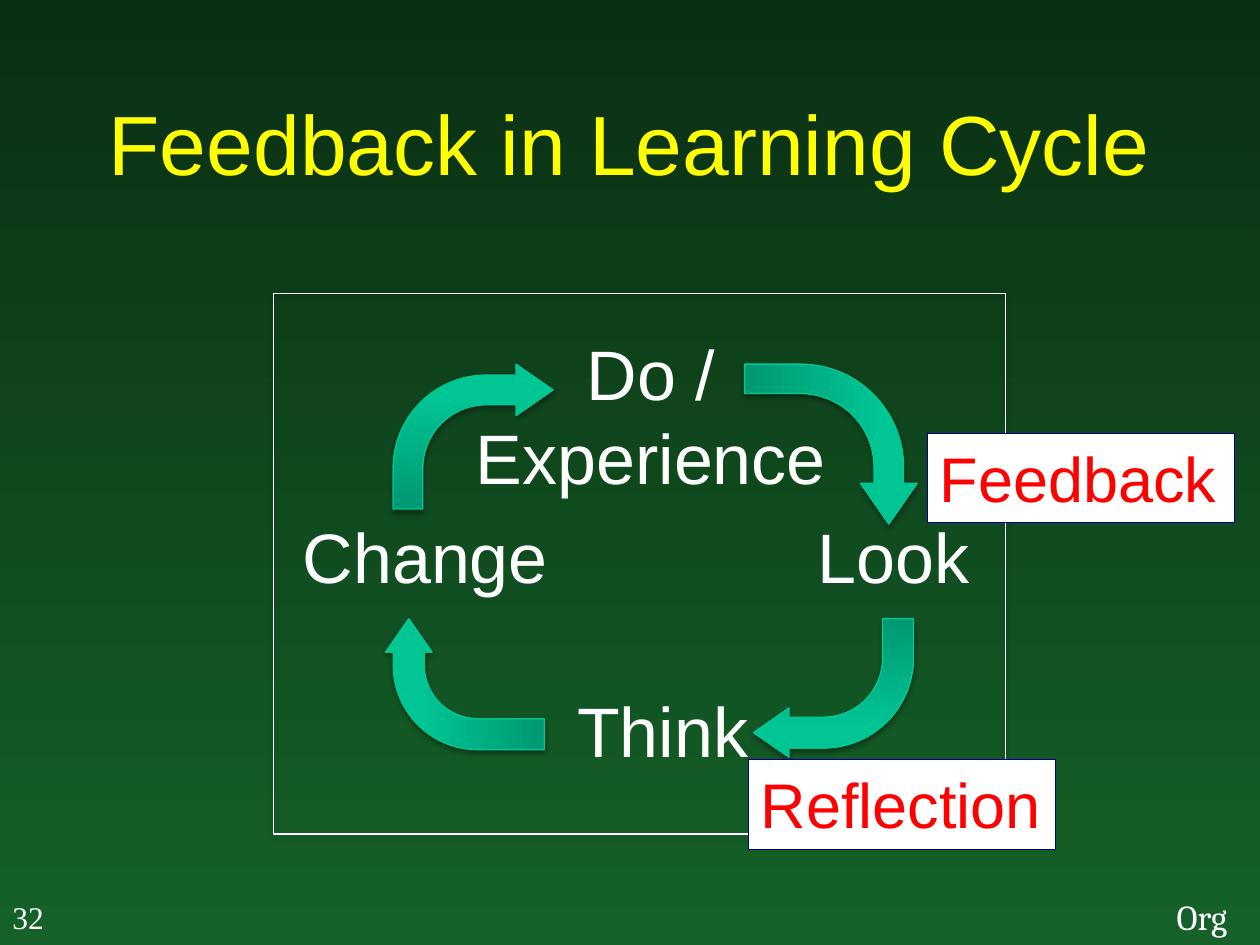
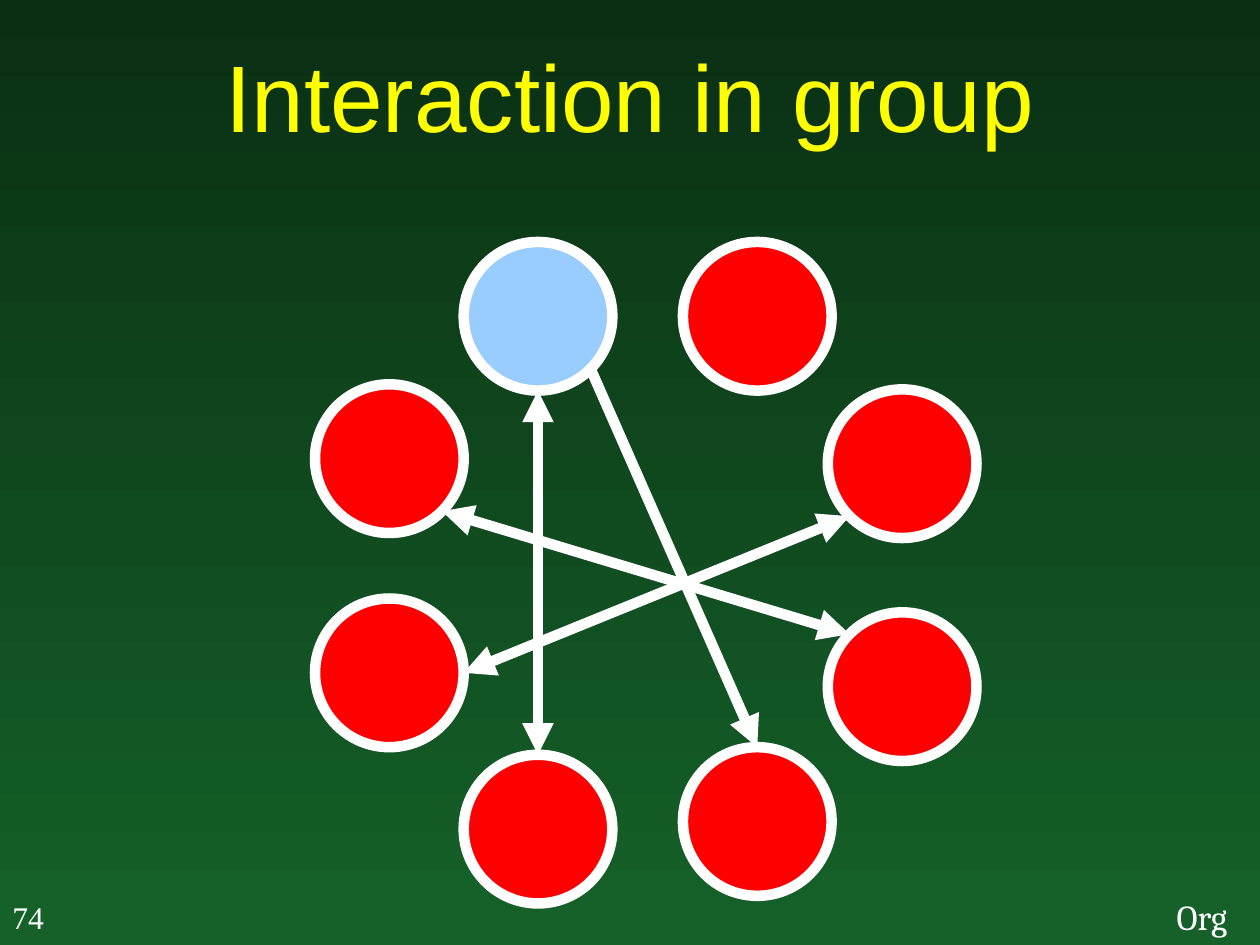
from dataclasses import dataclass
from math import cos, radians, sin

from lxml import etree
from pptx import Presentation
from pptx.dml.color import RGBColor
from pptx.enum.shapes import MSO_CONNECTOR, MSO_SHAPE
from pptx.enum.text import MSO_ANCHOR, PP_ALIGN
from pptx.oxml.ns import qn
from pptx.util import Inches, Pt

LEFT, CENTER = PP_ALIGN.LEFT, PP_ALIGN.CENTER
TOP, MIDDLE = MSO_ANCHOR.TOP, MSO_ANCHOR.MIDDLE
RECTANGLE, OVAL = MSO_SHAPE.RECTANGLE, MSO_SHAPE.OVAL
BENT_ARROW, STRAIGHT = MSO_SHAPE.BENT_ARROW, MSO_CONNECTOR.STRAIGHT
BLANK_LAYOUT = 6


@dataclass(frozen=True)
class Theme:
    background_top: str = "0A2F13"
    background_bottom: str = "156129"
    title: str = "FFFF00"
    white: str = "FFFFFF"
    red: str = "FF0000"
    leader: str = "99CCFF"
    label_edge: str = "000090"
    arrow_dark: str = "009872"
    arrow_light: str = "00C694"
    arrow_edge: str = "00C896"
    shadow: str = "000000"
    body_font: str = "Arial"
    footer_font: str = "Cambria"
    number_font: str = "Times New Roman"
    title_size: int = 48
    large_title_size: int = 54
    step_size: int = 40
    label_size: int = 36
    footer_size: int = 20
    number_size: int = 18
    thin: float = 0.75
    thick: float = 6


THEME = Theme()


@dataclass(frozen=True)
class Area:
    left: float
    top: float
    width: float
    height: float

    def lengths(self):
        return [Inches(v) for v in (self.left, self.top, self.width, self.height)]


@dataclass(frozen=True)
class TextStyle:
    size: int
    color: str
    font: str = THEME.body_font
    align: PP_ALIGN = LEFT
    anchor: MSO_ANCHOR = TOP
    wrap: bool = False


@dataclass(frozen=True)
class CycleArrow:
    area: Area
    rotation: int
    shaft: float
    bend: float


@dataclass(frozen=True)
class Member:
    left: float
    top: float
    color: str = THEME.red

    def rim(self, degrees: float) -> tuple[float, float]:
        radius = DIAMETER / 2
        angle = radians(degrees)
        return (self.left + radius * (1 + cos(angle)),
                self.top + radius * (1 + sin(angle)))


@dataclass(frozen=True)
class Exchange:
    start: str
    start_angle: int
    end: str
    end_angle: int
    two_way: bool = True


STEP = TextStyle(THEME.step_size, THEME.white, align=CENTER)
LABEL = TextStyle(THEME.label_size, THEME.red)
FOOTER = TextStyle(THEME.footer_size, THEME.white, THEME.footer_font, wrap=True)
NUMBER = TextStyle(THEME.number_size, THEME.white, THEME.number_font)

CYCLE_FRAME = Area(2.17, 2.33, 5.81, 4.29)
STEPS = {
    "Do /\nExperience": Area(3.66, 2.57, 3.01, 1.45),
    "Look": Area(6.38, 4.03, 1.42, 0.77),
    "Think": Area(4.47, 5.41, 1.58, 0.77),
    "Change": Area(2.29, 4.03, 2.17, 0.77),
}
DO_TO_LOOK = CycleArrow(Area(5.96, 2.84, 1.27, 1.37), 90, 0.184, 0.644)
OTHER_ARROWS = [
    CycleArrow(Area(5.98, 4.91, 1.27, 1.1), 180, 0.223, 0.65),
    CycleArrow(Area(3.17, 4.8, 1.04, 1.26), 270, 0.237, 0.644),
    CycleArrow(Area(3.12, 2.89, 1.27, 1.15), 0, 0.205, 0.644),
]
LABELS = {
    "Reflection": Area(5.94, 6.03, 2.44, 0.71),
    "Feedback": Area(7.36, 3.44, 2.44, 0.71),
}

DIAMETER = 1.18
MEMBERS = {
    "leader": Member(3.68, 1.92, THEME.leader),
    "upper left": Member(2.5, 3.05),
    "bottom left": Member(3.68, 5.99),
    "lower left": Member(2.5, 4.75),
    "bottom right": Member(5.42, 5.93),
    "top right": Member(5.42, 1.92),
    "upper right": Member(6.57, 3.09),
    "lower right": Member(6.57, 4.86),
}
EXCHANGES = [
    Exchange("lower left", 0, "upper right", 135),
    Exchange("bottom left", 270, "leader", 90),
    Exchange("upper left", 45, "lower right", 225),
    Exchange("leader", 45, "bottom right", 270, two_way=False),
]


def rgb(color: str) -> RGBColor:
    return RGBColor.from_string(color)


def fill_gradient(fill, start: str, end: str, angle: int, end_position: float = 1) -> None:
    fill.gradient()
    fill.gradient_angle = angle
    first, last = fill.gradient_stops
    first.color.rgb, last.color.rgb = rgb(start), rgb(end)
    first.position, last.position = 0, end_position


def write_text(shape, text: str, style: TextStyle) -> None:
    frame = shape.text_frame
    frame.word_wrap = style.wrap
    frame.vertical_anchor = style.anchor
    frame.text = text
    for para in frame.paragraphs:
        para.alignment = style.align
        para.font.size = Pt(style.size)
        para.font.name = style.font
        para.font.color.rgb = rgb(style.color)


def add_text(page, text: str, area: Area, style: TextStyle) -> None:
    write_text(page.shapes.add_textbox(*area.lengths()), text, style)


def add_outlined(page, kind, area: Area, fill: str | None, edge: str, weight: float):
    shape = page.shapes.add_shape(kind, *area.lengths())
    shape.shadow.inherit = False
    if fill:
        shape.fill.solid()
        shape.fill.fore_color.rgb = rgb(fill)
    else:
        shape.fill.background()
    shape.line.color.rgb = rgb(edge)
    shape.line.width = Pt(weight)
    return shape


def add_soft_shadow(shape) -> None:
    effects = shape._element.spPr.find(qn("a:effectLst"))
    shadow = etree.SubElement(
        effects, qn("a:outerShdw"), blurRad=str(Pt(3.1)), dist=str(Pt(1.8)),
        dir="5400000", rotWithShape="0")
    color = etree.SubElement(shadow, qn("a:srgbClr"), val=THEME.shadow)
    etree.SubElement(color, qn("a:alpha"), val="35000")


def add_cycle_arrow(page, arrow: CycleArrow) -> None:
    shape = add_outlined(page, BENT_ARROW, arrow.area, None, THEME.arrow_edge, THEME.thin)
    shape.rotation = arrow.rotation
    for index, value in enumerate((arrow.shaft, 0.178, 0.256, arrow.bend)):
        shape.adjustments[index] = value
    fill_gradient(shape.fill, THEME.arrow_dark, THEME.arrow_light, 90, 0.8)
    add_soft_shadow(shape)


def add_exchange(page, exchange: Exchange) -> None:
    start = MEMBERS[exchange.start].rim(exchange.start_angle)
    end = MEMBERS[exchange.end].rim(exchange.end_angle)
    connector = page.shapes.add_connector(STRAIGHT, *map(Inches, start + end))
    connector.line.color.rgb = rgb(THEME.white)
    connector.line.width = Pt(THEME.thick)
    properties = connector._element.spPr
    line = properties.find(qn("a:ln"))
    for tag in ("a:headEnd", "a:tailEnd") if exchange.two_way else ("a:tailEnd",):
        etree.SubElement(line, qn(tag), type="triangle")
    etree.SubElement(properties, qn("a:effectLst"))


def add_page(deck, title: str, title_area: Area, title_size: int, number: int):
    page = deck.slides.add_slide(deck.slide_layouts[BLANK_LAYOUT])
    fill_gradient(page.background.fill, THEME.background_top, THEME.background_bottom, 270)
    add_text(page, "Org", Area(9.24, 7.06, 0.73, 0.44), FOOTER)
    title_style = TextStyle(title_size, THEME.title, align=CENTER, anchor=MIDDLE, wrap=True)
    add_text(page, title, title_area, title_style)
    add_text(page, str(number), Area(0, 7.08, 0.45, 0.4), NUMBER)
    return page


def add_learning_cycle(deck) -> None:
    page = add_page(deck, "Feedback in Learning Cycle", Area(0.33, 0.5, 9.33, 1.25),
                    THEME.title_size, 32)
    for text, area in STEPS.items():
        add_text(page, text, area, STEP)
    add_cycle_arrow(page, DO_TO_LOOK)
    frame = add_outlined(page, RECTANGLE, CYCLE_FRAME, None, THEME.white, THEME.thin)
    add_soft_shadow(frame)
    for arrow in OTHER_ARROWS:
        add_cycle_arrow(page, arrow)
    for text, area in LABELS.items():
        label = add_outlined(page, RECTANGLE, area, THEME.white, THEME.label_edge, THEME.thin)
        write_text(label, text, LABEL)


def add_group_interaction(deck) -> None:
    page = add_page(deck, "Interaction in group", Area(0, 0, 10, 1.5),
                    THEME.large_title_size, 74)
    for member in MEMBERS.values():
        area = Area(member.left, member.top, DIAMETER, DIAMETER)
        add_outlined(page, OVAL, area, member.color, THEME.white, THEME.thick)
    for exchange in EXCHANGES:
        add_exchange(page, exchange)


def main() -> None:
    deck = Presentation()
    deck.slide_width, deck.slide_height = Inches(10), Inches(7.5)
    add_learning_cycle(deck)
    add_group_interaction(deck)
    deck.save("out.pptx")


if __name__ == "__main__":
    main()
